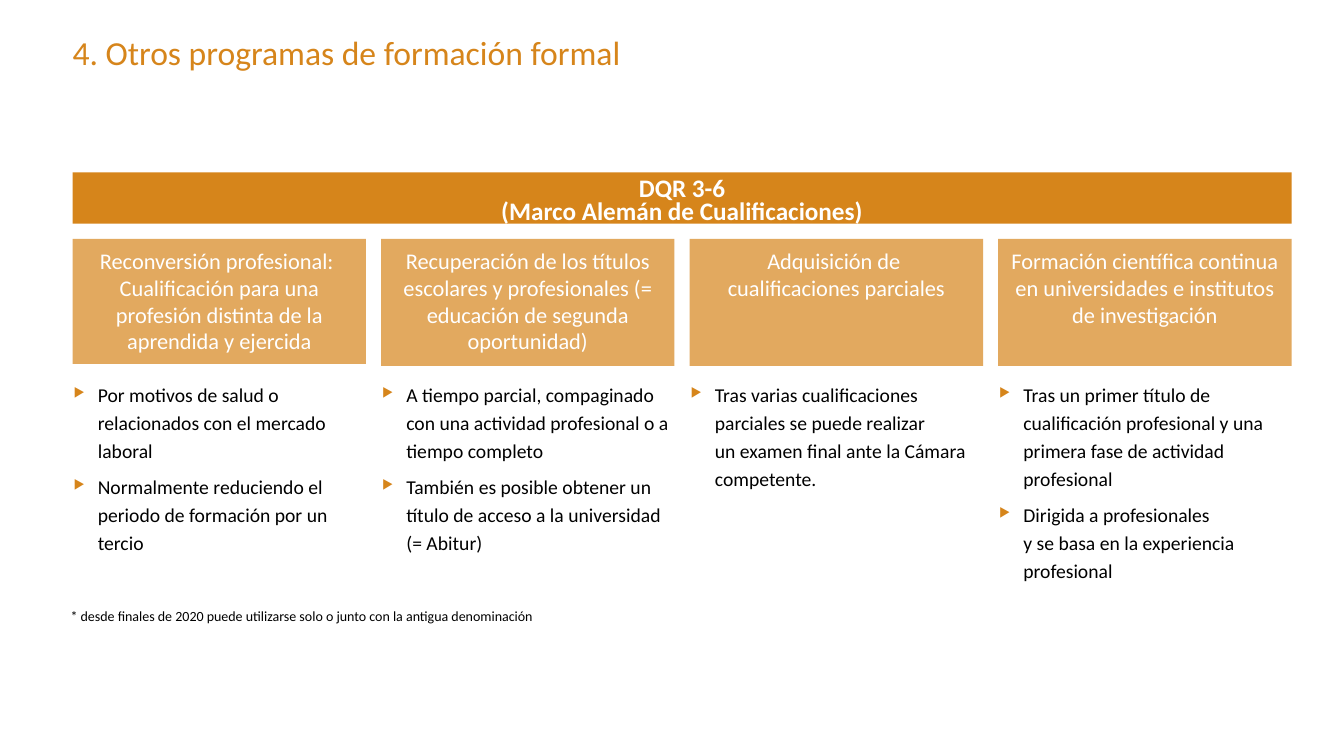
"""Build the slide on other formal training programmes."""
from dataclasses import dataclass

from lxml import etree
from pptx import Presentation
from pptx import util as u
from pptx.dml.color import RGBColor
from pptx.enum import shapes, text
from pptx.oxml.ns import qn
from pptx.shapes.autoshape import Shape
from pptx.slide import Slide

PX = 9144
ORANGE = RGBColor(0xD6, 0x85, 0x1B)
LIGHT_ORANGE = RGBColor(0xE2, 0xA9, 0x5F)
WHITE = RGBColor(0xFF, 0xFF, 0xFF)
BLACK = RGBColor(0x00, 0x00, 0x00)
FONT = "Calibri"
LEFT = 72
COLUMN_STEP = 306
COLUMN_WIDTH = 291
HEADING_TOP = 237
BULLETS_TOP = 375
BULLETS_OVERHANG = 30
BULLET_MARGIN = 55
BULLET_HANGING = 24


@dataclass(frozen=True)
class Box:
    """Position and size in px."""

    left: int
    top: int
    width: int
    height: int

    def emu(self) -> tuple[u.Emu, ...]:
        """Return left, top, width and height in EMU."""
        return tuple(px(side) for side in (self.left, self.top, self.width, self.height))


@dataclass(frozen=True)
class Style:
    """Look of the text in a box, with insets as left, top, right, bottom in px."""

    size: int
    color: RGBColor
    bold: bool = False
    centered: bool = False
    line_points: int | None = None
    bulleted: bool = False
    insets: tuple[int, int, int, int] = (0, 0, 0, 0)


@dataclass(frozen=True)
class Programme:
    """One column: heading and the bullets below it."""

    heading: str
    bullets: tuple[str, ...]
    heading_height: int = 126


TITLE = Style(24, ORANGE)
BANNER = Style(18, WHITE, bold=True, centered=True, line_points=17, insets=(4, 8, 4, 0))
HEADING = Style(16, WHITE, centered=True, insets=(4, 8, 4, 8))
BULLETS = Style(14, BLACK, line_points=20, bulleted=True)
FOOTNOTE = Style(10, BLACK, insets=(0, 5, 0, 5))

PROGRAMMES = (
    Programme(
        "Reconversión profesional: \nCualificación para una profesión distinta de la aprendida y ejercida",
        (
            "Por motivos de salud o relacionados con el mercado laboral",
            "Normalmente reduciendo el periodo de formación por un tercio",
        ),
        heading_height=124,
    ),
    Programme(
        "Recuperación de los títulos escolares y profesionales (= educación de segunda oportunidad)",
        (
            "A tiempo parcial, compaginado con una actividad profesional o a tiempo completo",
            "También es posible obtener un título de acceso a la universidad (= Abitur)",
        ),
    ),
    Programme(
        "Adquisición de \ncualificaciones parciales",
        (
            "Tras varias cualificaciones parciales se puede realizar \n"
            "un examen final ante la Cámara competente.",
        ),
    ),
    Programme(
        "Formación científica continua en universidades e institutos de investigación",
        (
            "Tras un primer título de cualificación profesional y una primera fase de actividad profesional",
            "Dirigida a profesionales \ny se basa en la experiencia profesional",
        ),
    ),
)


def px(length: int) -> u.Emu:
    """Convert px to EMU."""
    return u.Emu(length * PX)


def add_bullet(paragraph) -> None:
    """Give a paragraph a small orange triangle and a hanging indent."""
    properties = paragraph._p.get_or_add_pPr()
    properties.set("marL", str(px(BULLET_MARGIN)))
    properties.set("indent", str(-px(BULLET_HANGING)))
    color = etree.SubElement(properties, qn("a:buClr"))
    etree.SubElement(color, qn("a:srgbClr"), val=str(ORANGE))
    etree.SubElement(properties, qn("a:buSzPct"), val="65000")
    etree.SubElement(properties, qn("a:buChar"), char="▶")


def write(shape: Shape, lines: tuple[str, ...], style: Style,
          anchor: text.MSO_ANCHOR = text.MSO_ANCHOR.TOP) -> None:
    """Fill a shape with one styled paragraph per line."""
    frame = shape.text_frame
    frame.word_wrap = True
    frame.vertical_anchor = anchor
    frame.margin_left, frame.margin_top, frame.margin_right, frame.margin_bottom = map(px, style.insets)
    for index, line in enumerate(lines):
        paragraph = frame.add_paragraph() if index else frame.paragraphs[0]
        paragraph.text = line.replace("\n", "\v")
        if style.bulleted:
            add_bullet(paragraph)
        paragraph.alignment = text.PP_ALIGN.CENTER if style.centered else text.PP_ALIGN.LEFT
        if style.line_points:
            paragraph.line_spacing = u.Pt(style.line_points)
        if index:
            paragraph.space_before = u.Pt(6)
        paragraph.font.name = FONT
        paragraph.font.size = u.Pt(style.size)
        paragraph.font.bold = style.bold
        paragraph.font.color.rgb = style.color


def add_text(slide: Slide, box: Box, lines: tuple[str, ...], style: Style) -> None:
    """Add a plain text box."""
    write(slide.shapes.add_textbox(*box.emu()), lines, style)


def add_panel(slide: Slide, box: Box, fill: RGBColor, line: str, style: Style,
              anchor: text.MSO_ANCHOR = text.MSO_ANCHOR.TOP) -> None:
    """Add a filled rectangle with text."""
    shape = slide.shapes.add_shape(shapes.MSO_SHAPE.RECTANGLE, *box.emu())
    shape.shadow.inherit = False
    shape.fill.solid()
    shape.fill.fore_color.rgb = fill
    shape.line.fill.background()
    write(shape, (line,), style, anchor)


def add_programme(slide: Slide, left: int, programme: Programme) -> None:
    """Add one column with its heading and bullets."""
    heading_box = Box(left, HEADING_TOP, COLUMN_WIDTH, programme.heading_height)
    add_panel(slide, heading_box, LIGHT_ORANGE, programme.heading, HEADING)
    bullets_box = Box(left - BULLETS_OVERHANG, BULLETS_TOP, COLUMN_WIDTH + BULLETS_OVERHANG, 225)
    add_text(slide, bullets_box, programme.bullets, BULLETS)


def main() -> None:
    """Build and save the slide."""
    presentation = Presentation()
    presentation.slide_width = px(1333)
    presentation.slide_height = px(750)
    slide = presentation.slides.add_slide(presentation.slide_layouts[6])
    add_text(slide, Box(LEFT, 32, 984, 49), ("4. Otros programas de formación formal",), TITLE)
    banner_width = COLUMN_STEP * (len(PROGRAMMES) - 1) + COLUMN_WIDTH
    add_panel(slide, Box(LEFT, 171, banner_width, 51), ORANGE,
              "DQR 3-6\n(Marco Alemán de Cualificaciones)", BANNER, text.MSO_ANCHOR.MIDDLE)
    for index, programme in enumerate(PROGRAMMES):
        add_programme(slide, LEFT + index * COLUMN_STEP, programme)
    add_text(slide, Box(70, 598, 800, 27),
             ("* desde finales de 2020 puede utilizarse solo o junto con la antigua denominación",), FOOTNOTE)
    presentation.save("out.pptx")


if __name__ == "__main__":
    main()
